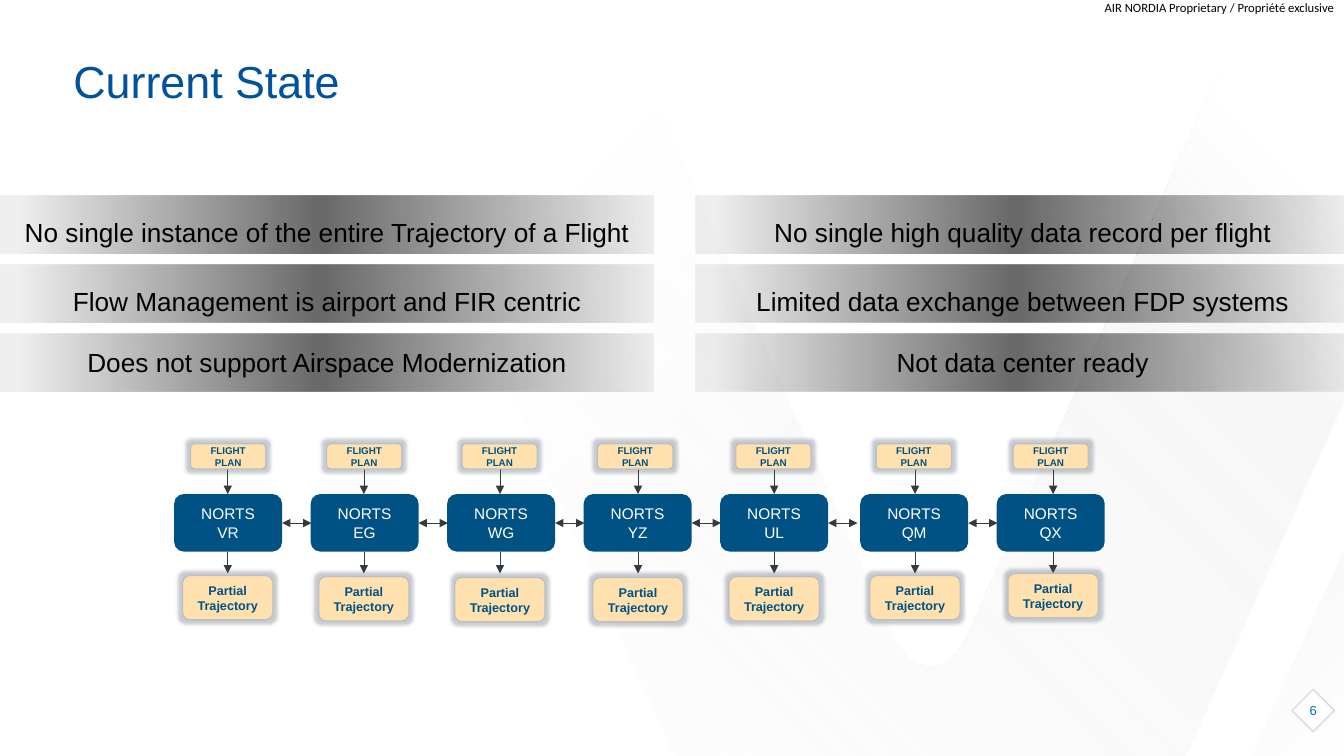
from lxml.etree import SubElement
from pptx import Presentation
from pptx.dml.color import RGBColor
from pptx.enum.shapes import MSO_CONNECTOR, MSO_SHAPE
from pptx.enum.text import MSO_ANCHOR, PP_ALIGN
from pptx.oxml import parse_xml
from pptx.oxml.ns import nsdecls, qn
from pptx.util import Cm, Pt

COLORS = {
    "white": "FFFFFF", "black": "000000", "haze": "F2F2F2", "edge": "BFBFBF",
    "rim": "DAD9D9", "title": "00529C", "page": "006EB0", "navy": "005284",
    "sand": "FEE1AE", "arrow": "353A40", "glow": "44546A",
}

deck = Presentation()
deck.slide_width, deck.slide_height = Cm(33.87), Cm(19.05)
slide = deck.slides.add_slide(deck.slide_layouts[6])
shapes = slide.shapes


def put(kind, left, top, width, height, lines=(), size=9, color="black", fill=None,
        line=None, bold=False, font="Arial", align=PP_ALIGN.CENTER, space=None):
    """Add a shape, or a text box if kind is None, with one paragraph per line."""
    place = Cm(left), Cm(top), Cm(width), Cm(height)
    if kind is None:
        shape = shapes.add_textbox(*place)
    else:
        shape = shapes.add_shape(kind, *place)
        shape.shadow.inherit = False
        shape.line.fill.background()
    if fill:
        shape.fill.solid()
        shape.fill.fore_color.rgb = RGBColor.from_string(COLORS[fill])
    if line:
        shape.line.color.rgb = RGBColor.from_string(COLORS[line])
        shape.line.width = Pt(1)
    frame = shape.text_frame
    frame.word_wrap = True
    frame.vertical_anchor = MSO_ANCHOR.MIDDLE
    for i, text in enumerate(lines):
        para = frame.add_paragraph() if i else frame.paragraphs[0]
        para.alignment, para.line_spacing = align, space
        run = para.add_run()
        run.text = text
        run.font.name, run.font.size, run.font.bold = font, Pt(size), bold
        run.font.color.rgb = RGBColor.from_string(COLORS[color])
    return shape


def fade(shape, stops, course):
    """Fill with a gradient of (position, color, opacity) stops, all in percent."""
    marks = "".join(
        f'<a:gs pos="{pos * 1000}"><a:srgbClr val="{COLORS[name]}">'
        f'<a:alpha val="{alpha * 1000}"/></a:srgbClr></a:gs>'
        for pos, name, alpha in stops)
    shape.fill.background()
    props = shape.element.spPr
    props.replace(props.find(qn("a:noFill")), parse_xml(
        f'<a:gradFill {nsdecls("a")} rotWithShape="1">'
        f"<a:gsLst>{marks}</a:gsLst>{course}</a:gradFill>"))


# Backdrop, outlines in hundredths of a centimetre
swoop = [(856, 0), (1539, 0), (2243, 1588)]
bend = [(2243, 1588), (2299, 1712), (2390, 1712), (2443, 1588)]
for step in range(1, 13):
    t = step / 12
    parts = (1 - t) ** 3, 3 * t * (1 - t) ** 2, 3 * t * t * (1 - t), t ** 3
    swoop.append(tuple(round(sum(p * spot[axis] for p, spot in zip(parts, bend)))
                       for axis in (0, 1)))
swoop += [(3150, 0), (3387, 0), (3387, 1006), (2987, 1905), (1702, 1905)]
wedge = [(3387, 1382), (3155, 1905), (3387, 1905)]

for points, stops, focus in (
    (swoop, [(4, "haze", 0), (75, "haze", 63), (91, "white", 0)],
     'l="0" t="100000" r="100000" b="0"'),
    (wedge, [(0, "haze", 0), (100, "haze", 63)],
     'l="100000" t="100000" r="0" b="0"'),
):
    pen = shapes.build_freeform(*points[0], scale=Cm(0.01))
    pen.add_line_segments(points[1:], close=True)
    form = pen.convert_to_shape()
    form.shadow.inherit = False
    form.line.fill.background()
    fade(form, stops, f'<a:path path="circle"><a:fillToRect {focus}/></a:path>')
    if points is swoop:
        veil = put(MSO_SHAPE.RECTANGLE, 0, 0, 25.81, 19.05)
        fade(veil, [(43, "white", 100), (73, "white", 0)],
             '<a:lin ang="2700000" scaled="0"/>')

# Header, title and page number
head = put(None, 27.84, 0, 6.17, 0.38, ["AIR NORDIA Proprietary / Propriété exclusive"],
           font="Calibri", align=PP_ALIGN.LEFT)
page = put(MSO_SHAPE.DIAMOND, 32.56, 17.37, 1.07, 1.07, ["6"], 9.3, "page",
           "white", "rim")
for shape in (head, page):
    frame = shape.text_frame
    frame.word_wrap = False
    frame.margin_left = frame.margin_right = frame.margin_top = frame.margin_bottom = 0
put(None, 1.6, 1.45, 29.87, 1.35, ["Current State"], 32, "title",
    align=PP_ALIGN.LEFT, space=0.9)

# Issue bands
issues = [
    ("No single instance of the entire Trajectory of a Flight",
     "No single high quality data record per flight", 1.5),
    ("Flow Management is airport and FIR centric",
     "Limited data exchange between FDP systems", 1.5),
    ("Does not support Airspace Modernization", "Not data center ready", None),
]
for row, (first, second, space) in enumerate(issues):
    for left, text in ((0, first), (17.53, second)):
        band = put(MSO_SHAPE.RECTANGLE, left, 4.92 + 1.74 * row, 16.48, 1.46, [text],
                   18.7, space=space)
        fade(band, [(0, "black", 6), (51, "black", 59), (97, "black", 6)],
             '<a:lin ang="10800000" scaled="0"/>')

# Centres: code, plan centre, arrow centre, top of trajectory
sites = [
    ("VR", 5.75, 5.74, 14.5), ("EG", 9.18, 9.17, 14.53), ("WG", 12.59, 12.6, 14.55),
    ("YZ", 16.01, 16.08, 14.55), ("UL", 19.49, 19.51, 14.53),
    ("QM", 23.03, 23.06, 14.5), ("QX", 26.48, 26.54, 14.45),
]
WIDE = 2.72
hubs = [5.75 + 3.44 * i + (0.09 if i > 4 else 0) for i in range(len(sites))]

arrows = [(hub + WIDE / 2, 13.18, hub + WIDE / 2 + 0.74, 13.18, True)
          for hub in hubs[:-1]]
for code, plan, mid, top in sites:
    arrows += [(mid, 11.81, mid, 12.45, False), (mid, 13.9, mid, 14.45, False)]
for x1, y1, x2, y2, both in arrows:
    link = shapes.add_connector(MSO_CONNECTOR.STRAIGHT, Cm(x1), Cm(y1), Cm(x2), Cm(y2))
    link.line.color.rgb = RGBColor.from_string(COLORS["arrow"])
    link.line.width = Pt(0.5)
    stroke = link.line._get_or_add_ln()
    for end in ("a:headEnd", "a:tailEnd") if both else ("a:tailEnd",):
        SubElement(stroke, qn(end), type="triangle")
    SubElement(link.element.spPr, qn("a:effectLst"))

for hub, (code, plan, mid, top) in zip(hubs, sites):
    put(MSO_SHAPE.ROUNDED_RECTANGLE, hub - WIDE / 2, 12.45, WIDE, 1.45,
        ["NORTS", code], 11, "white", "navy")
    for left, y, width, height, lines, size in (
        (plan - 0.95, 11.18, 1.9, 0.64, ["FLIGHT PLAN"], 7),
        (mid - 1.14, top, 2.28, 1.12, ["Partial", "Trajectory"], 9),
    ):
        card = put(MSO_SHAPE.ROUNDED_RECTANGLE, left, y, width, height, lines, size,
                   "navy", "sand", "edge", bold=True)
        card.element.spPr.find(qn("a:effectLst")).append(parse_xml(
            f'<a:glow {nsdecls("a")} rad="63500"><a:srgbClr val="{COLORS["glow"]}">'
            '<a:alpha val="30000"/></a:srgbClr></a:glow>'))

deck.save("out.pptx")
